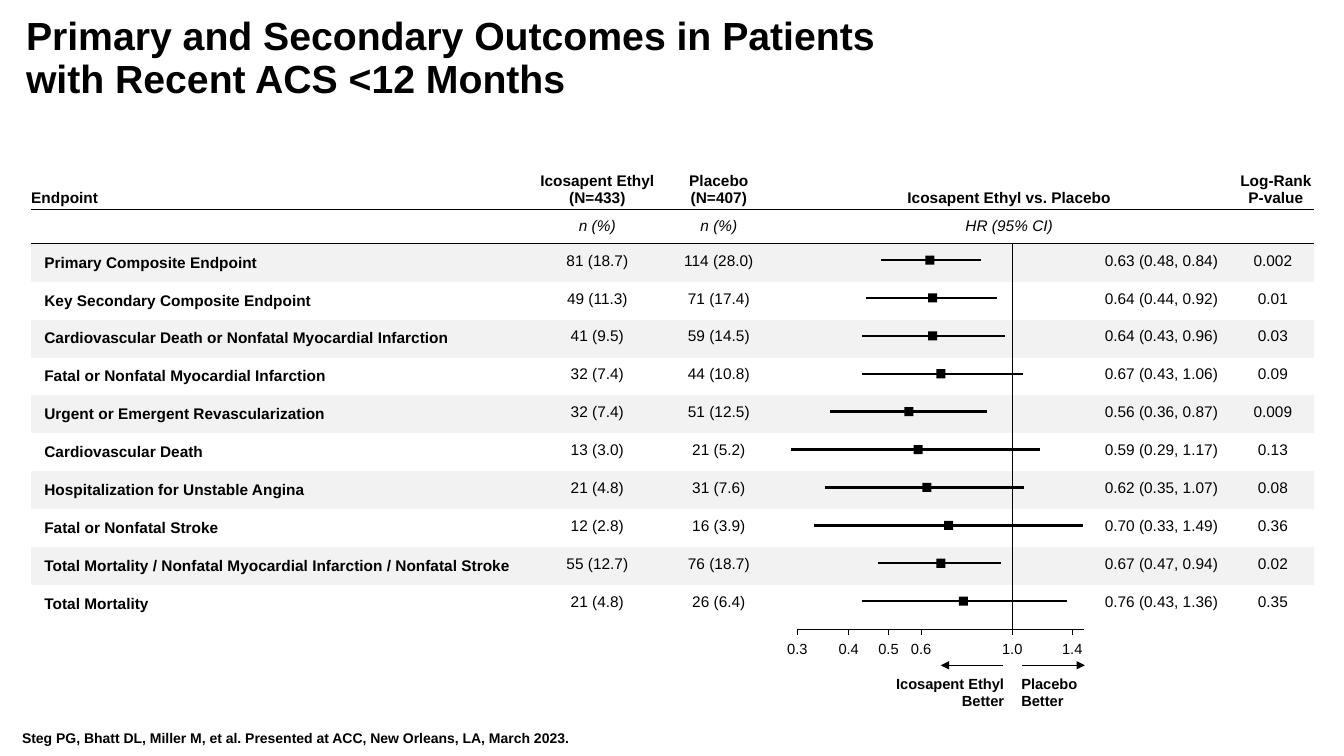
"""Build a forest plot slide of outcomes in patients with recent ACS."""
from math import log

from lxml import etree
from pptx import Presentation
from pptx.dml.color import RGBColor
from pptx.enum import shapes, text
from pptx.oxml import ns
from pptx.util import Inches, Pt

LEFT, CENTER, RIGHT = text.PP_ALIGN.LEFT, text.PP_ALIGN.CENTER, text.PP_ALIGN.RIGHT
TOP, MIDDLE, BOTTOM = text.MSO_ANCHOR.TOP, text.MSO_ANCHOR.MIDDLE, text.MSO_ANCHOR.BOTTOM

NO_GRID_STYLE = "{2D5ABB26-0587-4C30-8999-92F81FD0307C}"
COLUMN_WIDTHS = [4.9, 1.43, 0.98, 4.6, 0.81]
ROW_HEIGHTS = [0.57, 0.34] + [0.376] * 10
HEADER = ["Endpoint", "Icosapent Ethyl\v(N=433)", "Placebo\v(N=407)",
          "Icosapent Ethyl vs. Placebo", "Log-Rank\vP-value"]
UNITS = ["", "n (%)", "n (%)", "HR (95% CI)", ""]
OUTCOMES = [
    ("Primary Composite Endpoint", "81 (18.7)", "114 (28.0)", (0.63, 0.48, 0.84), "0.002"),
    ("Key Secondary Composite Endpoint", "49 (11.3)", "71 (17.4)", (0.64, 0.44, 0.92), "0.01"),
    ("Cardiovascular Death or Nonfatal Myocardial Infarction", "41 (9.5)", "59 (14.5)",
     (0.64, 0.43, 0.96), "0.03"),
    ("Fatal or Nonfatal Myocardial Infarction", "32 (7.4)", "44 (10.8)",
     (0.67, 0.43, 1.06), "0.09"),
    ("Urgent or Emergent Revascularization", "32 (7.4)", "51 (12.5)",
     (0.56, 0.36, 0.87), "0.009"),
    ("Cardiovascular Death", "13 (3.0)", "21 (5.2)", (0.59, 0.29, 1.17), "0.13"),
    ("Hospitalization for Unstable Angina", "21 (4.8)", "31 (7.6)", (0.62, 0.35, 1.07), "0.08"),
    ("Fatal or Nonfatal Stroke", "12 (2.8)", "16 (3.9)", (0.70, 0.33, 1.49), "0.36"),
    ("Total Mortality / Nonfatal Myocardial Infarction / Nonfatal Stroke", "55 (12.7)",
     "76 (18.7)", (0.67, 0.47, 0.94), "0.02"),
    ("Total Mortality", "21 (4.8)", "26 (6.4)", (0.76, 0.43, 1.36), "0.35"),
]
TICKS = [0.3, 0.4, 0.5, 0.6, 1.0, 1.4]
UNITY_X, LOG_WIDTH, AXIS_Y = 10.04, 1.77, 6.24
FIRST_ROW_Y, ROW_STEP, MARKER_SIZE = 2.58, 0.376, 0.09


def color(value):
    return RGBColor.from_string(value)


def ratio_x(ratio):
    return UNITY_X + LOG_WIDTH * log(ratio)


def write(frame, content, font="Arial", size=11, ink="000000", bold=False, italic=False,
          align=LEFT, before=0, spacing=None):
    paragraph = frame.paragraphs[0]
    paragraph.text = content
    paragraph.alignment = align
    paragraph.space_before = Pt(before)
    paragraph.line_spacing = spacing
    for run in paragraph.runs:
        run.font.name = font
        run.font.size = Pt(size)
        run.font.bold = bold
        run.font.italic = italic
        run.font.color.rgb = color(ink)


class ForestSlide:
    ink = "000000"
    band = "F2F2F2"

    def __init__(self, presentation):
        self.slide = presentation.slides.add_slide(presentation.slide_layouts[6])

    def label(self, content, left, top, width, height, insets=(0, 0, 0, 0),
              anchor=TOP, wrap=True, **style):
        shape = self.slide.shapes.add_textbox(
            Inches(left), Inches(top), Inches(width), Inches(height))
        frame = shape.text_frame
        frame.word_wrap = wrap
        frame.vertical_anchor = anchor
        frame.margin_left, frame.margin_top, frame.margin_right, frame.margin_bottom = map(
            Inches, insets)
        write(frame, content, ink=self.ink, **style)

    def line(self, x1, y1, x2, y2, weight=0.5, arrow=False):
        connector = self.slide.shapes.add_connector(
            shapes.MSO_CONNECTOR.STRAIGHT, Inches(x1), Inches(y1), Inches(x2), Inches(y2))
        connector.line.color.rgb = color(self.ink)
        connector.line.width = Pt(weight)
        properties = connector._element.spPr
        if arrow:
            outline = properties.find(ns.qn("a:ln"))
            etree.SubElement(outline, ns.qn("a:tailEnd"), type="triangle")
        etree.SubElement(properties, ns.qn("a:effectLst"))

    def marker(self, x, y):
        half = MARKER_SIZE / 2
        shape = self.slide.shapes.add_shape(
            shapes.MSO_SHAPE.RECTANGLE, Inches(x - half), Inches(y - half),
            Inches(MARKER_SIZE), Inches(MARKER_SIZE))
        shape.shadow.inherit = False
        shape.fill.solid()
        shape.fill.fore_color.rgb = color(self.ink)
        shape.line.fill.background()

    def border(self, cell, side):
        edge = etree.Element(ns.qn(f"a:{side}"), w=str(Pt(1)))
        fill = etree.SubElement(edge, ns.qn("a:solidFill"))
        etree.SubElement(fill, ns.qn("a:srgbClr"), val=self.ink)
        cell._tc.get_or_add_tcPr().insert(0, edge)

    def cell(self, cell, content, insets, anchor=MIDDLE, banded=False, **style):
        cell.margin_left, cell.margin_top, cell.margin_right, cell.margin_bottom = map(
            Inches, insets)
        cell.vertical_anchor = anchor
        if banded:
            cell.fill.solid()
            cell.fill.fore_color.rgb = color(self.band)
        else:
            cell.fill.background()
        if content:
            write(cell.text_frame, content, ink=self.ink, **style)

    def table(self, left, top):
        table = self.slide.shapes.add_table(
            len(ROW_HEIGHTS), len(COLUMN_WIDTHS), Inches(left), Inches(top),
            Inches(sum(COLUMN_WIDTHS)), Inches(sum(ROW_HEIGHTS))).table
        table._tbl.tblPr.find(ns.qn("a:tableStyleId")).text = NO_GRID_STYLE
        table.first_row = table.horz_banding = False
        for column, width in zip(table.columns, COLUMN_WIDTHS):
            column.width = Inches(width)
        for row, height in zip(table.rows, ROW_HEIGHTS):
            row.height = Inches(height)
        heading_lefts = [0, 0, 0, 0.18, 0.06]
        for index, (heading, unit) in enumerate(zip(HEADER, UNITS)):
            inset = heading_lefts[index]
            self.cell(table.cell(0, index), heading, (inset, 0.03, 0, 0.03), BOTTOM,
                      bold=True, align=CENTER if index else LEFT, before=2)
            self.border(table.cell(0, index), "lnB")
            self.cell(table.cell(1, index), unit, (inset, 0.03, 0, 0.04) if unit else (0,) * 4,
                      italic=True, align=CENTER, before=2)
            self.border(table.cell(1, index), "lnT")
        for number, (name, treated, placebo, (ratio, low, high), p_value) in enumerate(OUTCOMES):
            banded = number % 2 == 0
            self.cell(table.cell(number + 2, 0), name, (0.13, 0.05, 0, 0.05),
                      banded=banded, bold=True, before=4)
            interval = f"{ratio:.2f} ({low:.2f}, {high:.2f})"
            for index, value in enumerate([treated, placebo, interval, p_value], 1):
                inset = 3.2 if value == interval else 0
                self.cell(table.cell(number + 2, index), value, (inset, 0.02, 0, 0.06),
                          banded=banded, align=CENTER)

    def forest(self):
        self.line(UNITY_X, 2.41, UNITY_X, AXIS_Y)
        for number, outcome in enumerate(OUTCOMES):
            ratio, low, high = outcome[3]
            y = FIRST_ROW_Y + number * ROW_STEP
            self.line(ratio_x(low), y, ratio_x(high), y, weight=1.75)
            self.marker(ratio_x(ratio), y)

    def axis(self):
        self.line(ratio_x(TICKS[0]), AXIS_Y, 10.75, AXIS_Y)
        for tick in TICKS:
            x = ratio_x(tick)
            self.line(x, AXIS_Y, x, AXIS_Y + 0.06)
            self.label(f"{tick:.1f}", x - 0.15, 6.33, 0.3, 0.19, (0, 0.02, 0, 0),
                       size=10.5, align=CENTER, before=1.2)
        self.line(9.95, 6.6, 9.33, 6.6, weight=1, arrow=True)
        self.line(10.14, 6.6, 10.76, 6.6, weight=1, arrow=True)
        self.label("Icosapent Ethyl\vBetter", 8.73, 6.69, 1.23, 0.36,
                   size=10.5, bold=True, align=RIGHT)
        self.label("Placebo\vBetter", 10.13, 6.69, 0.81, 0.36, size=10.5, bold=True)


def main():
    presentation = Presentation()
    presentation.slide_width, presentation.slide_height = Inches(13.33), Inches(7.5)
    page = ForestSlide(presentation)
    insets = (0.1, 0.05, 0.1, 0.05)
    page.table(0.31, 1.51)
    page.label("Primary and Secondary Outcomes in Patients\vwith Recent ACS <12 Months",
               0.16, 0.12, 12.83, 0.96, insets, size=28, bold=True, spacing=0.9)
    page.forest()
    page.axis()
    page.label("Steg PG, Bhatt DL, Miller M, et al. Presented at ACC, New Orleans, LA, March 2023.",
               0.12, 7.18, 7.11, 0.27, insets, BOTTOM, size=10, bold=True)
    presentation.save("out.pptx")


if __name__ == "__main__":
    main()
